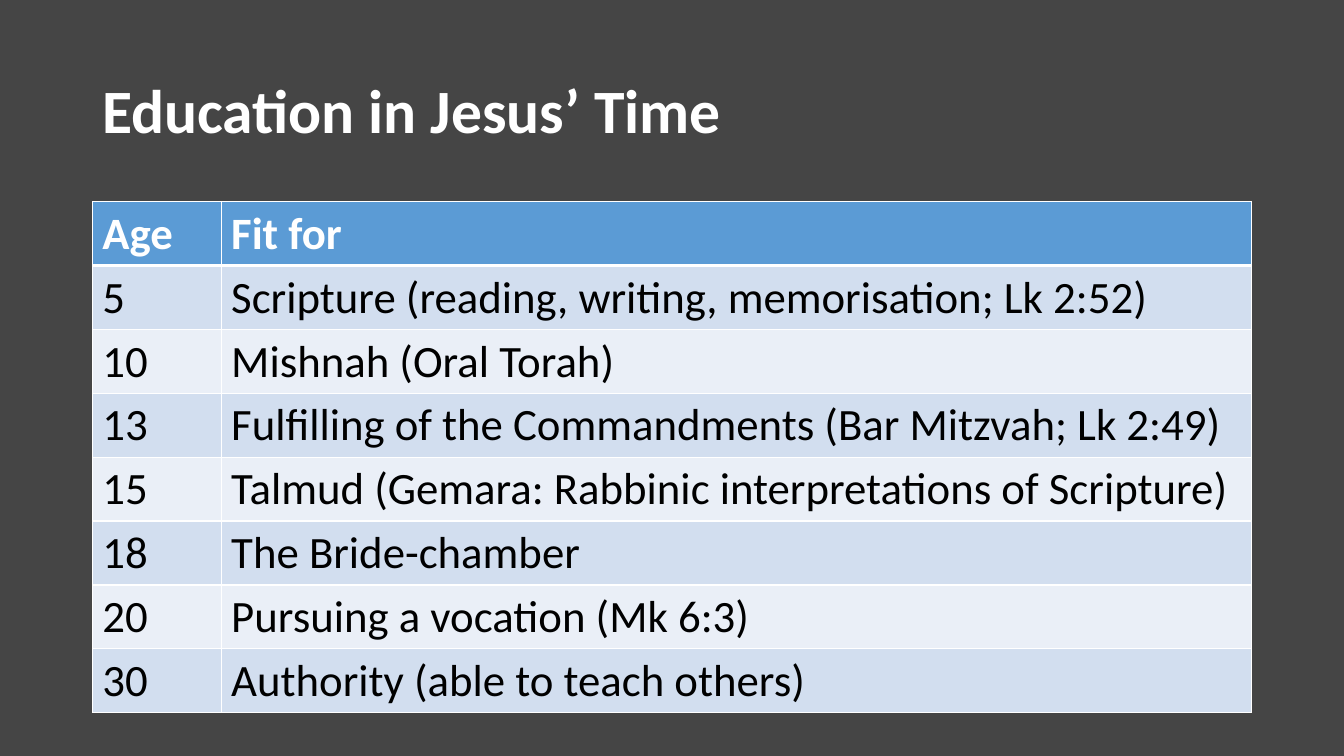
"""Build a slide with a table of the stages of education in Jesus' time."""
from lxml import etree
from pptx import Presentation
from pptx import util as u
from pptx.dml import color
from pptx.enum import text
from pptx.oxml import ns

COLORS = {
    "background": "454545",
    "white": "FFFFFF",
    "black": "000000",
    "header": "5B9BD5",
    "odd": "D2DEEF",
    "even": "EAEFF7",
}

STAGES = [
    ("Age", "Fit for"),
    ("5", "Scripture (reading, writing, memorisation; Lk 2:52)"),
    ("10", "Mishnah (Oral Torah)"),
    ("13", "Fulfilling of the Commandments (Bar Mitzvah; Lk 2:49)"),
    ("15", "Talmud (Gemara: Rabbinic interpretations of Scripture)"),
    ("18", "The Bride-chamber"),
    ("20", "Pursuing a vocation (Mk 6:3)"),
    ("30", "Authority (able to teach others)"),
]


class SlideBuilder:
    """Hold the style and the current slide."""

    font_name = "Calibri"

    def __init__(self, slide):
        """Keep the slide and paint its background."""
        self.slide = slide
        self.fill(slide.background.fill, "background")

    def fill(self, target, shade):
        """Give a fill one solid colour."""
        target.solid()
        target.fore_color.rgb = color.RGBColor.from_string(COLORS[shade])

    def style(self, paragraph, size, shade, bold):
        """Set the font of a paragraph."""
        font = paragraph.font
        font.name, font.size, font.bold = self.font_name, u.Pt(size), bold
        font.color.rgb = color.RGBColor.from_string(COLORS[shade])

    def title(self, wording, left, top, width, height):
        """Add the slide title."""
        box = self.slide.shapes.add_textbox(*map(u.Pt, (left, top, width, height)))
        frame = box.text_frame
        frame.word_wrap = True
        frame.vertical_anchor = text.MSO_ANCHOR.MIDDLE
        heading = frame.paragraphs[0]
        heading.text = wording
        heading.line_spacing = 0.9
        self.style(heading, 44, "white", True)

    def border(self, cell, side, weight):
        """Add a white line along one side of a cell."""
        properties = cell._tc.get_or_add_tcPr()
        line = etree.SubElement(properties, ns.qn(f"a:ln{side}"), w=str(u.Pt(weight)))
        solid = etree.SubElement(line, ns.qn("a:solidFill"))
        etree.SubElement(solid, ns.qn("a:srgbClr"), val=COLORS["white"])

    def table(self, rows, left, top, widths, row_height):
        """Add a banded table whose first row is the header."""
        frame = self.slide.shapes.add_table(
            len(rows), len(widths), u.Pt(left), u.Pt(top),
            u.Pt(sum(widths)), u.Pt(row_height * len(rows)))
        grid = frame.table
        for column, width in zip(grid.columns, widths):
            column.width = u.Pt(width)
        for index, entries in enumerate(rows):
            grid.rows[index].height = u.Pt(row_height)
            is_header = index == 0
            band = "header" if is_header else "odd" if index % 2 else "even"
            weights = {"L": 1, "R": 1, "T": 3 if index == 1 else 1, "B": 3 if is_header else 1}
            for cell, wording in zip(grid.rows[index].cells, entries):
                cell.text = wording
                self.style(cell.text_frame.paragraphs[0], 32,
                           "white" if is_header else "black", is_header)
                for side, weight in weights.items():
                    self.border(cell, side, weight)
                self.fill(cell.fill, band)


def main():
    """Create and save the presentation."""
    deck = Presentation()
    deck.slide_width, deck.slide_height = u.Pt(960), u.Pt(540)
    builder = SlideBuilder(deck.slides.add_slide(deck.slide_layouts[6]))
    builder.title("Education in Jesus’ Time", 66, 28.75, 828, 104.4)
    builder.table(STAGES, 66, 144, (92, 736), 45.6)
    deck.save("out.pptx")


if __name__ == "__main__":
    main()
